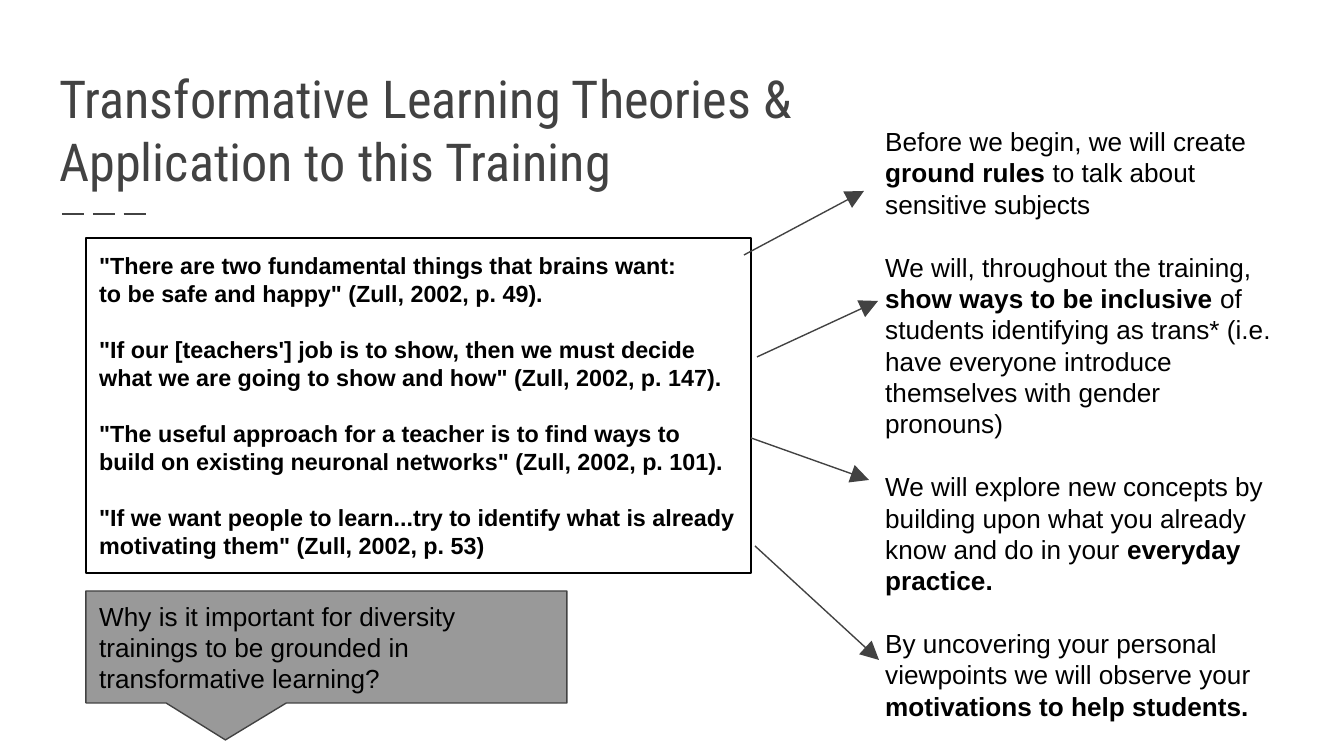
from dataclasses import dataclass

from lxml import etree
from pptx import Presentation
from pptx.dml.color import RGBColor
from pptx.enum import dml, shapes, text
from pptx.oxml.ns import qn
from pptx.util import Emu, Pt

SCALE = 914400 / 134.4  # EMU per px


@dataclass(frozen=True)
class Theme:
    ink: str = "000000"
    dark: str = "424242"
    gray: str = "999999"
    head: str = "Roboto Condensed"
    face: str = "Arial"
    title: float = 28
    body: float = 14
    quote: float = 12.5
    lead: float = 1.2  # line height over type size
    thin: float = 0.75
    rule: float = 1.5


T = Theme()

# Text: parts between bars are bold; the flag asks for a blank line's gap above
QUOTES = [
    ('"There are two fundamental things that brains want:', False),
    ('to be safe and happy" (Zull, 2002, p. 49).', False),
    ('"If our [teachers\'] job is to show, then we must decide what we are '
     'going to show and how" (Zull, 2002, p. 147).', True),
    ('"The useful approach for a teacher is to find ways to build on existing '
     'neuronal networks" (Zull, 2002, p. 101).', True),
    ('"If we want people to learn...try to identify what is already '
     'motivating them" (Zull, 2002, p. 53)', True),
]
PLANS = [
    ("Before we begin, we will create |ground rules| to talk about "
     "sensitive subjects", False),
    ("We will, throughout the training, |show ways to be inclusive |of "
     "students identifying as trans* (i.e. have everyone introduce themselves "
     "with gender pronouns)", True),
    ("We will explore new concepts by building upon what you already know and "
     "do in your |everyday practice.|", True),
    ("By uncovering your personal viewpoints we will observe your "
     "|motivations to help students.|", True),
]
ASK = [("Why is it important for diversity trainings to be grounded in "
        "transformative learning?", False)]
ARROWS = [
    (744, 255, 864, 191),
    (757, 357, 878, 301),
    (751, 438, 869, 480),
    (755, 546, 879, 660),
]


def px(*vals):
    return [Emu(round(v * SCALE)) for v in vals]


def color(code):
    return RGBColor.from_string(code)


def frame(shape, anchor):
    """Set wrapping, insets and anchor, and return the text frame."""
    tf = shape.text_frame
    tf.word_wrap = True
    tf.auto_size = text.MSO_AUTO_SIZE.NONE
    tf.vertical_anchor = anchor
    tf.margin_left, tf.margin_top, tf.margin_right, tf.margin_bottom = (
        px(13.44) * 4)
    return tf


def style(para, face, size, ink, bold=False):
    para.alignment = text.PP_ALIGN.LEFT
    font = para.font
    font.name, font.size, font.bold = face, Pt(size), bold
    font.color.rgb = color(ink)


def write(shape, paras, size, bold=False, anchor=text.MSO_ANCHOR.TOP):
    """Fill a shape with paragraphs of plain and bold parts."""
    tf = frame(shape, anchor)
    for i, (words, gap) in enumerate(paras):
        para = tf.paragraphs[0] if i == 0 else tf.add_paragraph()
        style(para, T.face, size, T.ink, bold)
        para.line_spacing = Pt(size * T.lead)
        para.space_before = Pt(size * T.lead if gap else 0)
        for j, part in enumerate(words.split("|")):
            if part:
                run = para.add_run()
                run.text = part
                if j % 2:
                    run.font.bold = True


def box(slide, kind, area, line, fill=None):
    shape = slide.shapes.add_shape(kind, *px(*area))
    shape.shadow.inherit = False
    if fill:
        shape.fill.solid()
        shape.fill.fore_color.rgb = color(fill)
    else:
        shape.fill.background()
    shape.line.color.rgb = color(line)
    shape.line.width = Pt(T.thin)
    return shape


def stroke(slide, ends, width, dash=None, arrow=False):
    link = slide.shapes.add_connector(
        shapes.MSO_CONNECTOR.STRAIGHT, *px(*ends))
    link.line.color.rgb = color(T.dark)
    link.line.width = Pt(width)
    if dash:
        link.line.dash_style = dash
    if arrow:
        etree.SubElement(link.line._get_or_add_ln(), qn("a:tailEnd"),
                         type="triangle", w="lg", len="lg")
    etree.SubElement(link._element.spPr, qn("a:effectLst"))


def title(slide, words):
    shape = slide.shapes.title
    shape.left, shape.top, shape.width, shape.height = px(46, 93, 808, 112)
    tf = frame(shape, text.MSO_ANCHOR.BOTTOM)
    tf.text = words
    style(tf.paragraphs[0], T.head, T.title, T.dark)


def main():
    deck = Presentation()
    deck.slide_width, deck.slide_height = px(1344, 756)
    slide = deck.slides.add_slide(deck.slide_layouts[5])

    # Heading with dashed rule
    stroke(slide, (62, 214, 152, 214), T.rule, dash=dml.MSO_LINE.LONG_DASH)
    title(slide, "Transformative Learning Theories & "
                 "Application to this Training")

    # Quotes on the left, plans on the right
    rect = box(slide, shapes.MSO_SHAPE.RECTANGLE, (86, 238, 665, 335), T.ink)
    write(rect, QUOTES, T.quote, bold=True)
    side = slide.shapes.add_textbox(*px(872, 112, 425, 269))
    write(side, PLANS, T.body)

    # Arrows from quote to plan
    for ends in ARROWS:
        stroke(slide, ends, T.thin, arrow=True)

    # Question callout
    call = box(slide, shapes.MSO_SHAPE.RECTANGULAR_CALLOUT,
               (86, 591, 481, 112), T.dark, T.gray)
    call.adjustments[0], call.adjustments[1] = -0.21, 0.83
    write(call, ASK, T.body, anchor=text.MSO_ANCHOR.MIDDLE)

    deck.save("out.pptx")


if __name__ == "__main__":
    main()
